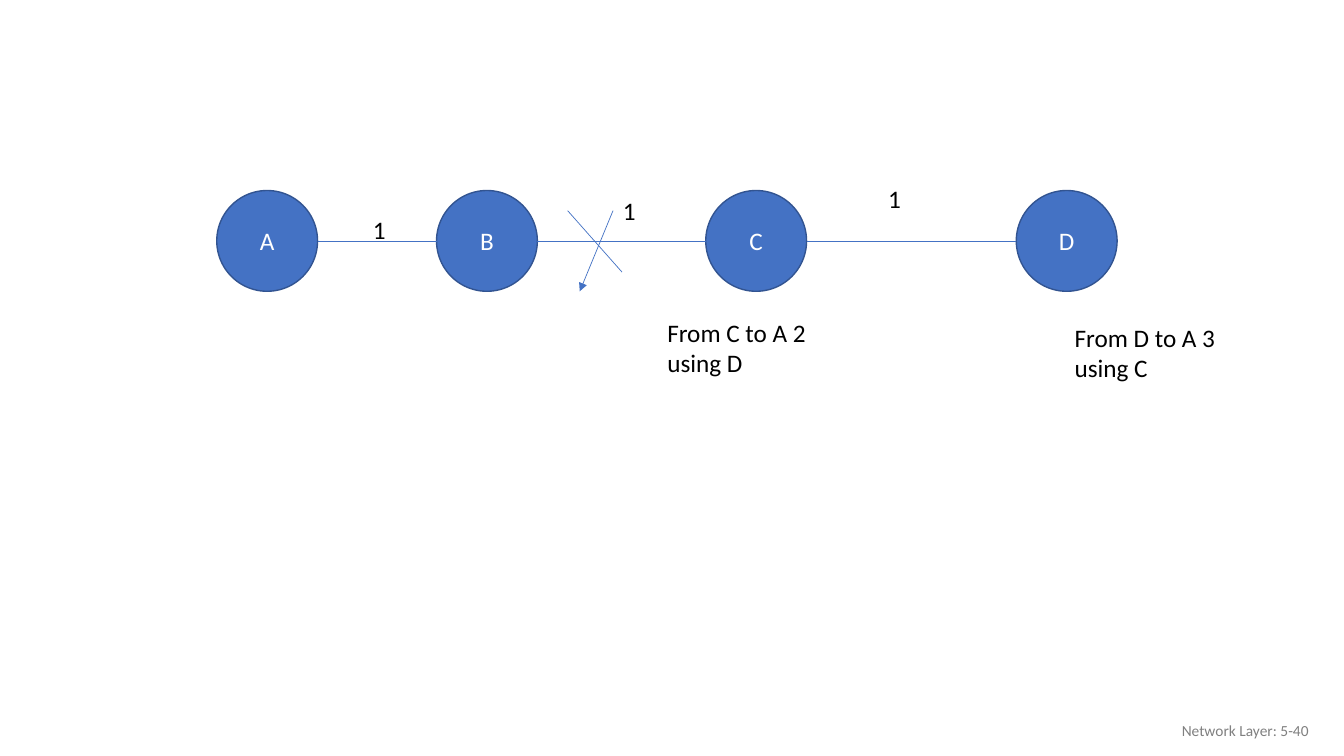
import pptx
import pptx.dml.color
import pptx.enum.shapes
import pptx.enum.text
import pptx.oxml
import pptx.oxml.ns
import pptx.util

EMU_PER_PX = 9144
BLUE, OUTLINE = "4472C4", "325491"
WHITE, BLACK, GREY = "FFFFFF", "000000", "808080"
NODE_TOP, NODE_SIZE = 189, 100
NODES = {"A": 215, "B": 433, "C": 700, "D": 1008}
ALIGN = pptx.enum.text.PP_ALIGN
ANCHOR = pptx.enum.text.MSO_ANCHOR


def px(*lengths):
    return [pptx.util.Emu(length * EMU_PER_PX) for length in lengths]


def color(value):
    return pptx.dml.color.RGBColor.from_string(value)


def apply(target, formats):
    for name, value in formats.items():
        setattr(target, name, value)


def write(shape, text, ink, size=18, align=ALIGN.LEFT, anchor=ANCHOR.TOP, wrap=True):
    apply(shape.text_frame, {"word_wrap": wrap, "vertical_anchor": anchor})
    para = shape.text_frame.paragraphs[0]
    para.alignment = align
    span = para.add_run()
    span.text = text
    apply(span.font, {"name": "Calibri", "size": pptx.util.Pt(size)})
    span.font.color.rgb = color(ink)


def add_label(page, box, text, ink=BLACK, **formats):
    write(page.shapes.add_textbox(*px(*box)), text, ink, **formats)


def add_node(page, name, left):
    oval = pptx.enum.shapes.MSO_SHAPE.OVAL
    node = page.shapes.add_shape(oval, *px(left, NODE_TOP, NODE_SIZE, NODE_SIZE))
    node.shadow.inherit = False
    node.fill.solid()
    node.fill.fore_color.rgb = color(BLUE)
    node.line.color.rgb = color(OUTLINE)
    node.line.width = pptx.util.Pt(1)
    write(node, name, WHITE, align=ALIGN.CENTER, anchor=ANCHOR.MIDDLE)


def add_line(page, ends, arrow=False):
    straight = pptx.enum.shapes.MSO_CONNECTOR.STRAIGHT
    line = page.shapes.add_connector(straight, *px(*ends))
    line.line.color.rgb = color(BLUE)
    line.line.width = pptx.util.Pt(0.5)
    if arrow:
        tail = pptx.oxml.parse_xml(
            f'<a:tailEnd {pptx.oxml.ns.nsdecls("a")} type="triangle"/>')
        line.line._get_or_add_ln().append(tail)
    effects = pptx.oxml.parse_xml(f'<a:effectLst {pptx.oxml.ns.nsdecls("a")}/>')
    line._element.spPr.append(effects)


def main():
    deck = pptx.Presentation()
    width, height = px(1333, 750)
    apply(deck, {"slide_width": width, "slide_height": height})
    page = deck.slides.add_slide(deck.slide_layouts[6])

    add_label(page, (1008, 705, 300, 40), "Network Layer: 5-40", GREY,
              size=11, align=ALIGN.RIGHT, anchor=ANCHOR.MIDDLE)

    for name, left in NODES.items():
        add_node(page, name, left)
    lefts = list(NODES.values())
    middle = NODE_TOP + NODE_SIZE // 2
    for start, end in zip(lefts, lefts[1:]):
        add_line(page, (start + NODE_SIZE, middle, end, middle))

    for left, top in ((360, 208), (608, 189), (871, 177)):
        add_label(page, (left, top, 33, 40), "1", wrap=False)
    add_label(page, (1056, 315, 162, 71), "From D to A 3 using C")
    add_label(page, (652, 310, 162, 71), "From C to A 2 using D")

    add_line(page, (608, 209, 575, 289), arrow=True)
    add_line(page, (563, 209, 617, 270))
    deck.save("out.pptx")


if __name__ == "__main__":
    main()
